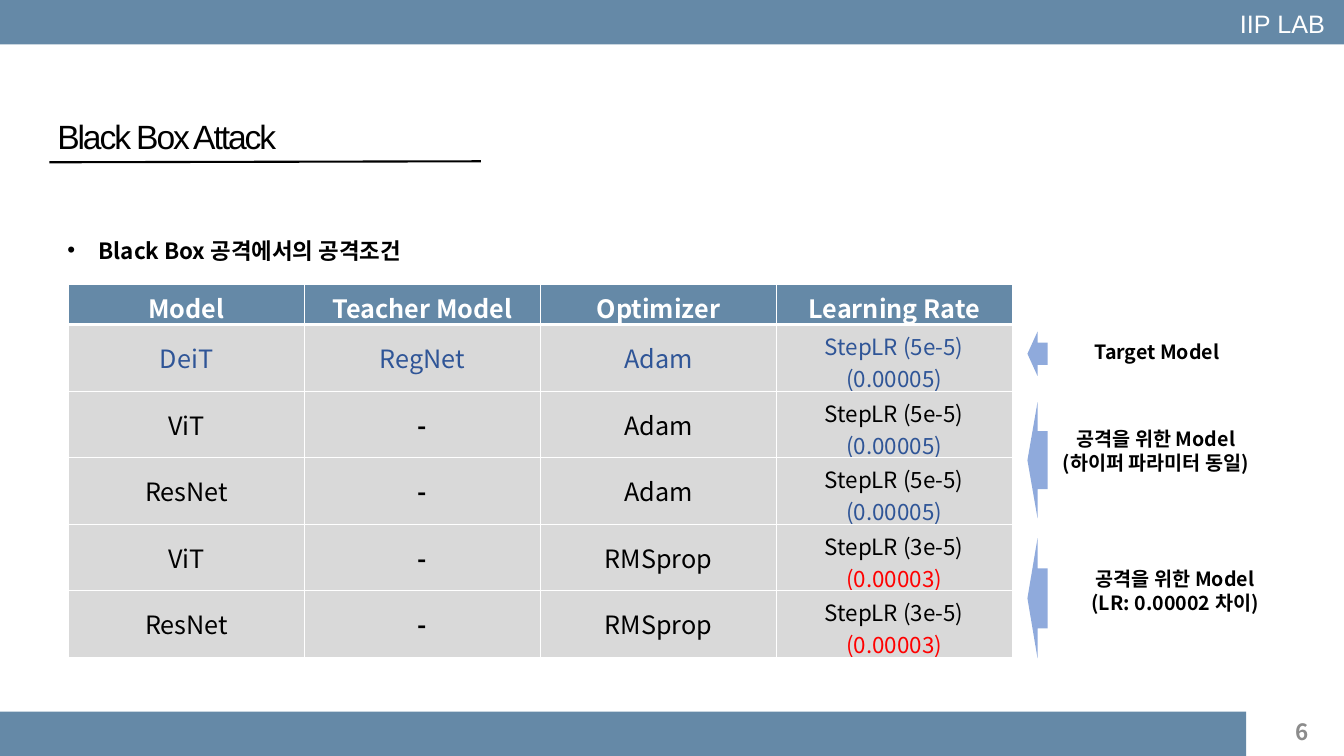
from lxml.etree import SubElement
from pptx import Presentation
from pptx.dml.color import RGBColor
from pptx.enum.shapes import MSO_CONNECTOR, MSO_SHAPE
from pptx.enum.text import MSO_ANCHOR, PP_ALIGN
from pptx.oxml.ns import qn
from pptx.util import Inches, Pt

STEEL = RGBColor(0x65, 0x89, 0xA7)
WHITE = RGBColor(0xFF, 0xFF, 0xFF)
BLACK = RGBColor(0x00, 0x00, 0x00)
GRAY = RGBColor(0x8C, 0x8C, 0x8C)
CELL_GRAY = RGBColor(0xD9, 0xD9, 0xD9)
BLUE = RGBColor(0x2F, 0x55, 0x97)
RED = RGBColor(0xFF, 0x00, 0x00)
ARROW_BLUE = RGBColor(0x8F, 0xAA, 0xDC)
KOREAN = "Noto Sans CJK KR"


def write(frame, text, size, color, font=KOREAN, bold=False, align=PP_ALIGN.LEFT):
    """Fill a text frame with one paragraph; a vertical tab breaks the line."""
    para = frame.paragraphs[0]
    para.text = text
    para.alignment = align
    para.font.size = Pt(size)
    for span in para.runs:
        span.font.name = font
        span.font.size = Pt(size)
        span.font.bold = bold
        span.font.color.rgb = color
        SubElement(span.font._element, qn("a:ea"), typeface=font)
    return para


def add_solid(kind, left, top, width, height, color):
    shape = slide.shapes.add_shape(
        kind, Inches(left), Inches(top), Inches(width), Inches(height))
    shape.shadow.inherit = False
    shape.fill.solid()
    shape.fill.fore_color.rgb = color
    shape.line.fill.background()
    return shape


deck = Presentation()
deck.slide_width = Inches(13.33)
deck.slide_height = Inches(7.5)
slide = deck.slides.add_slide(deck.slide_layouts[6])

# Header and footer bars
add_solid(MSO_SHAPE.RECTANGLE, 0, 7.06, 12.36, 0.44, STEEL)
add_solid(MSO_SHAPE.RECTANGLE, 0, 0, 13.33, 0.44, STEEL)

page_number = slide.shapes.add_textbox(Inches(12.59), Inches(7.06), Inches(0.49), Inches(0.4))
page_number.text_frame.word_wrap = True
page_number.text_frame.vertical_anchor = MSO_ANCHOR.MIDDLE
write(page_number.text_frame, "6", 16, GRAY, bold=True, align=PP_ALIGN.RIGHT)

lab_name = slide.shapes.add_textbox(Inches(12.2), Inches(0.03), Inches(1.05), Inches(0.4))
lab_name.text_frame.word_wrap = False
write(lab_name.text_frame, "IIP LAB", 18, WHITE, font="Arial")

# Title and its underline
underline = slide.shapes.add_connector(
    MSO_CONNECTOR.STRAIGHT, Inches(0.49), Inches(1.61), Inches(4.77), Inches(1.6))
underline.line.color.rgb = BLACK
underline.line.width = Pt(1.5)
SubElement(underline._element.spPr, qn("a:effectLst"))

title = slide.shapes.add_textbox(Inches(0.47), Inches(1.1), Inches(7.5), Inches(0.5))
title.text_frame.word_wrap = True
title_para = write(title.text_frame, "Black Box Attack", 24, BLACK, font="Arial")
title_para.runs[0].font._element.set("spc", "-150")

# Bulleted heading
heading = slide.shapes.add_textbox(Inches(0.57), Inches(2.3), Inches(11.79), Inches(0.37))
heading.text_frame.word_wrap = True
heading_para = write(heading.text_frame, "Black Box 공격에서의 공격조건", 16, BLACK, bold=True)
bullet_format = heading_para._p.get_or_add_pPr()
bullet_format.set("marL", str(Inches(0.31)))
bullet_format.set("indent", str(Inches(-0.31)))
bullet = bullet_format.makeelement(qn("a:buChar"), {"char": "•"})
bullet_font = bullet_format.makeelement(qn("a:buFont"), {"typeface": "Arial"})
bullet_format.insert(0, bullet_font)
bullet_font.addnext(bullet)

# Attack conditions: rows of cell texts, row colour, colour of the rate value
HEADERS = ["Model", "Teacher Model", "Optimizer", "Learning Rate"]
CONDITIONS = [
    (["DeiT", "RegNet", "Adam", "StepLR (5e-5)\v(0.00005)"], BLUE, BLUE),
    (["ViT", "-", "Adam", "StepLR (5e-5)\v(0.00005)"], BLACK, BLUE),
    (["ResNet", "-", "Adam", "StepLR (5e-5)\v(0.00005)"], BLACK, BLUE),
    (["ViT", "-", "RMSprop", "StepLR (3e-5)\v(0.00003)"], BLACK, RED),
    (["ResNet", "-", "RMSprop", "StepLR (3e-5)\v(0.00003)"], BLACK, RED),
]
rows = [(HEADERS, WHITE, WHITE)] + CONDITIONS
table = slide.shapes.add_table(
    len(rows), len(HEADERS), Inches(0.68), Inches(2.82), Inches(9.36), Inches(3.68)).table
for column in table.columns:
    column.width = Inches(2.34)
for row_index, (texts, color, rate_color) in enumerate(rows):
    is_header = row_index == 0
    table.rows[row_index].height = Inches(0.38 if is_header else 0.66)
    for column_index, text in enumerate(texts):
        cell = table.cell(row_index, column_index)
        cell.vertical_anchor = MSO_ANCHOR.MIDDLE
        size = 16 if "\v" in text else 18
        para = write(cell.text_frame, text, size, color,
                     bold=is_header or text == "-", align=PP_ALIGN.CENTER)
        para.runs[-1].font.color.rgb = rate_color if "\v" in text else color
        for side in ("lnL", "lnR", "lnT", "lnB"):
            thick = (is_header and side == "lnB") or (row_index == 1 and side == "lnT")
            border = SubElement(cell._tc.get_or_add_tcPr(), qn(f"a:{side}"),
                                w=str(Pt(3 if thick else 1)))
            SubElement(SubElement(border, qn("a:solidFill")), qn("a:srgbClr"), val=str(WHITE))
        cell.fill.solid()
        cell.fill.fore_color.rgb = STEEL if is_header else CELL_GRAY

# Arrows pointing at the row groups
for top, height in [(3.29, 0.44), (3.99, 1.15), (5.34, 1.19)]:
    arrow = add_solid(MSO_SHAPE.RIGHT_ARROW, 10.19, top, 0.2, height, ARROW_BLUE)
    arrow.rotation = 180

# Notes beside the arrows
NOTES = [
    (10.21, 3.32, 0.34, "Target Model"),
    (10.2, 4.19, 0.57, "공격을 위한 Model\v(하이퍼 파라미터 동일)"),
    (10.39, 5.58, 0.57, "공격을 위한 Model\v(LR: 0.00002 차이)"),
]
for left, top, height, text in NOTES:
    note = slide.shapes.add_textbox(Inches(left), Inches(top), Inches(2.53), Inches(height))
    note.text_frame.word_wrap = True
    write(note.text_frame, text, 14, BLACK, bold=True, align=PP_ALIGN.CENTER)

deck.save("out.pptx")
